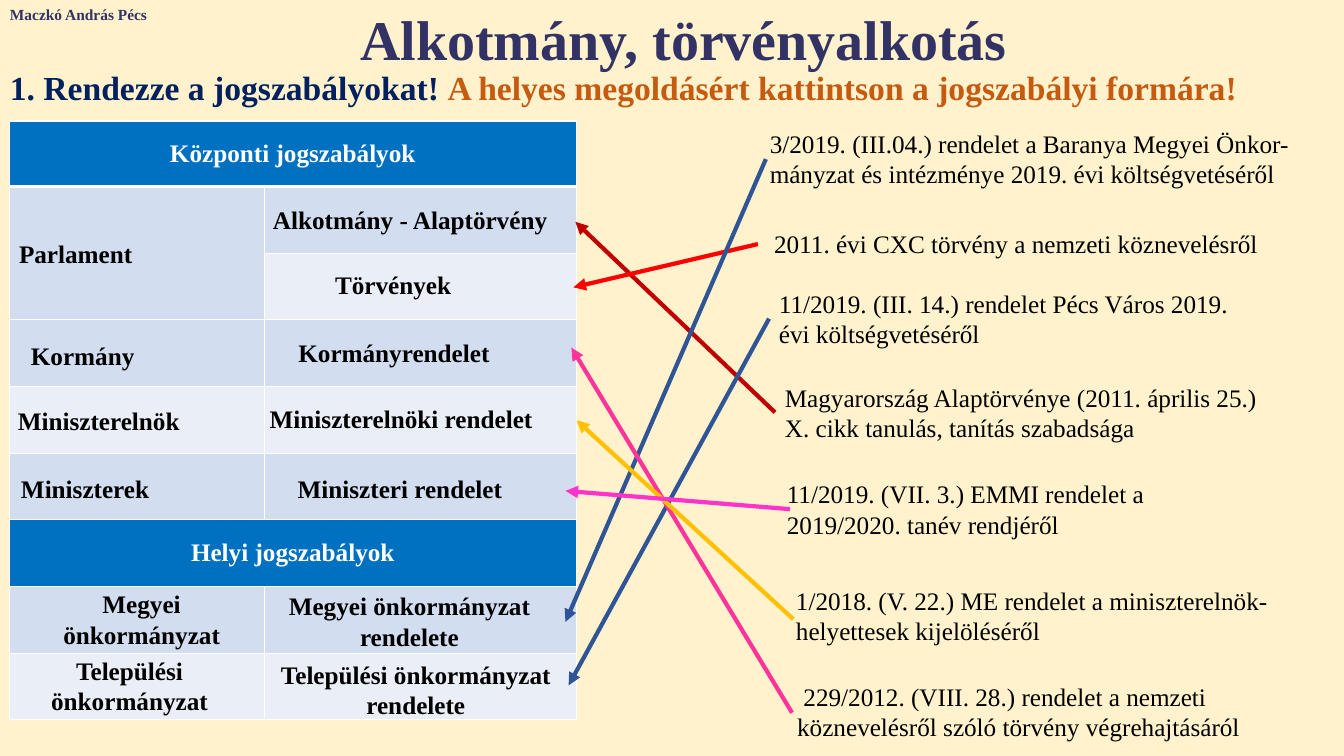
from dataclasses import dataclass

import lxml.etree
import pptx
import pptx.dml.color
import pptx.enum.shapes
import pptx.enum.text
import pptx.oxml
import pptx.oxml.ns
import pptx.slide
import pptx.table
import pptx.util

Cm = pptx.util.Cm
Pt = pptx.util.Pt
qn = pptx.oxml.ns.qn
LEFT = pptx.enum.text.PP_ALIGN.LEFT
CENTER = pptx.enum.text.PP_ALIGN.CENTER
FONT = "Times New Roman"
COLORS = {
    "cream": "FFF2CC", "indigo": "323264", "navy": "002060", "orange": "C55A11",
    "black": "000000", "white": "FFFFFF", "header": "0070C0",
    "odd_row": "D2DEEF", "even_row": "EAEFF7",
    "constitution": "C00000", "act": "FF0000", "local": "2F5597",
    "government": "FF3399", "prime_minister": "FFC000", "minister": "FF33CC",
}


@dataclass(frozen=True)
class Span:
    text: str
    color: str = "black"
    size: float = 18
    bold: bool = False


@dataclass(frozen=True)
class Label:
    left: float
    top: float
    width: float
    height: float
    paragraphs: tuple[tuple[Span, ...], ...]
    align: pptx.enum.text.PP_ALIGN = LEFT


@dataclass(frozen=True)
class Arrow:
    color: str
    start: tuple[float, float]
    end: tuple[float, float]


def rgb(color: str) -> pptx.dml.color.RGBColor:
    return pptx.dml.color.RGBColor.from_string(COLORS[color])


def line_height(lines: int) -> float:
    return 0.25 + 0.77 * lines


def category(left: float, top: float, width: float, text: str,
             align: pptx.enum.text.PP_ALIGN = CENTER, lines: int = 1) -> Label:
    return Label(left, top, width, line_height(lines), ((Span(text, bold=True),),), align)


def example(left: float, top: float, width: float, *texts: str, lines: int = 2) -> Label:
    return Label(left, top, width, line_height(lines), tuple((Span(text),) for text in texts))


def add_run(paragraph, span: Span) -> None:
    run = paragraph.add_run()
    run.text = span.text
    run.font.name = FONT
    run.font.size = Pt(span.size)
    run.font.bold = span.bold
    run.font.color.rgb = rgb(span.color)


def add_label(slide: pptx.slide.Slide, label: Label) -> None:
    frame = slide.shapes.add_textbox(
        Cm(label.left), Cm(label.top), Cm(label.width), Cm(label.height)).text_frame
    frame.word_wrap = True
    for index, spans in enumerate(label.paragraphs):
        paragraph = frame.add_paragraph() if index else frame.paragraphs[0]
        paragraph.alignment = label.align
        for span in spans:
            add_run(paragraph, span)


def add_arrow(slide: pptx.slide.Slide, arrow: Arrow) -> None:
    connector = slide.shapes.add_connector(
        pptx.enum.shapes.MSO_CONNECTOR.STRAIGHT,
        *(Cm(value) for value in arrow.start + arrow.end))
    connector.line.color.rgb = rgb(arrow.color)
    connector.line.width = Pt(3)
    lxml.etree.SubElement(connector.line._get_or_add_ln(), qn("a:tailEnd"), type="triangle")
    lxml.etree.SubElement(connector._element.spPr, qn("a:effectLst"))


def set_borders(cell: pptx.table._Cell, top: float, bottom: float) -> None:
    properties = cell._tc.get_or_add_tcPr()
    widths = {"a:lnL": 1, "a:lnR": 1, "a:lnT": top, "a:lnB": bottom}
    for index, (side, width) in enumerate(widths.items()):
        border = lxml.etree.Element(qn(side), w=str(Pt(width)))
        fill = lxml.etree.SubElement(border, qn("a:solidFill"))
        lxml.etree.SubElement(fill, qn("a:srgbClr"), val=COLORS["white"])
        properties.insert(index, border)


def add_law_table(slide: pptx.slide.Slide) -> None:
    headings = {0: "Központi jogszabályok", 6: "Helyi jogszabályok"}
    columns = (6.43, 7.87)
    rows = (1.65,) + (1.68,) * 8
    laws = slide.shapes.add_table(
        len(rows), len(columns), Cm(0.23), Cm(3.05), Cm(sum(columns)), Cm(sum(rows))).table
    for column, width in zip(laws.columns, columns):
        column.width = Cm(width)
    for index, height in enumerate(rows):
        laws.rows[index].height = Cm(height)
        fill = "header" if index in headings else "odd_row" if index % 2 else "even_row"
        for cell in laws.rows[index].cells:
            cell.fill.solid()
            cell.fill.fore_color.rgb = rgb(fill)
            set_borders(cell, 3 if index == 1 else 1, 3 if index == 0 else 1)
    for index, heading in headings.items():
        cell = laws.cell(index, 0)
        cell.merge(laws.cell(index, 1))
        cell.vertical_anchor = pptx.enum.text.MSO_ANCHOR.MIDDLE
        paragraph = cell.text_frame.paragraphs[0]
        paragraph.alignment = CENTER
        add_run(paragraph, Span(heading, "white", bold=True))
    laws.cell(1, 0).merge(laws.cell(2, 0))


HEADINGS = (
    Label(0, 0, 4.04, 0.74, ((Span("Maczkó András Pécs", "indigo", 11, True),),)),
    Label(0, 1.57, 32.61, 1.27, ((
        Span("1. Rendezze a jogszabályokat! ", "navy", 24, True),
        Span("A helyes megoldásért kattintson a jogszabályi formára!", "orange", 24, True)),)),
    Label(4.27, 0, 25.91, 1.96,
          ((Span("Alkotmány, törvényalkotás", "indigo", 40, True),),), CENTER),
)
LAWMAKERS = (
    category(0.23, 5.87, 3.58, "Parlament", LEFT),
    category(0.53, 8.46, 3.58, "Kormány", LEFT),
    category(0.2, 10.1, 4.78, "Miniszterelnök", LEFT),
    category(0.28, 11.81, 3.94, "Miniszterek", LEFT),
    category(0.33, 14.71, 6.48, "Megyei önkormányzat", lines=2),
    category(0.79, 16.38, 4.95, "Települési önkormányzat", lines=2),
)
LAW_FORMS = (
    category(6.63, 5.03, 7.62, "Alkotmány - Alaptörvény", LEFT),
    category(6.1, 6.65, 7.62, "Törvények"),
    category(6.12, 8.38, 7.62, "Kormányrendelet"),
    category(6.3, 10.03, 7.62, "Miniszterelnöki rendelet"),
    category(6.27, 11.79, 7.62, "Miniszteri rendelet"),
    category(6.6, 14.76, 7.44, "Megyei önkormányzat rendelete", lines=2),
    category(6.76, 16.48, 7.44, "Települési önkormányzat rendelete", lines=2),
)
EXAMPLES = (
    example(19.15, 3.1, 14.71, "3/2019. (III.04.) rendelet a Baranya Megyei Önkor-mányzat "
            "és intézménye 2019. évi költségvetéséről"),
    example(19.1, 5.64, 13.59, " 2011. évi CXC törvény a nemzeti köznevelésről", lines=1),
    example(19.38, 7.14, 12.45,
            "11/2019. (III. 14.) rendelet Pécs Város 2019. évi költségvetéséről"),
    example(19.53, 9.5, 13.46, "Magyarország Alaptörvénye (2011. április 25.)",
            "X. cikk tanulás, tanítás szabadsága"),
    example(19.58, 11.94, 10.69,
            "11/2019. (VII. 3.) EMMI rendelet a 2019/2020. tanév rendjéről"),
    example(19.81, 14.63, 13.21,
            "1/2018. (V. 22.) ME rendelet a miniszterelnök-helyettesek kijelöléséről"),
    example(19.84, 17.04, 13.03, " 229/2012. (VIII. 28.) rendelet a nemzeti köznevelésről "
            "szóló törvény végrehajtásáról"),
)
SOLUTIONS = (
    Arrow("constitution", (19.53, 10.39), (14.5, 5.59)),
    Arrow("act", (19.1, 6.15), (14.45, 7.24)),
    Arrow("local", (19.38, 8.03), (14.33, 17.27)),
    Arrow("local", (19.3, 4.01), (14.25, 15.67)),
    Arrow("government", (19.96, 17.96), (14.4, 8.76)),
    Arrow("prime_minister", (19.99, 15.6), (14.53, 10.59)),
    Arrow("minister", (19.91, 12.83), (14.25, 12.37)),
)


def main() -> None:
    deck = pptx.Presentation()
    deck.slide_width, deck.slide_height = Cm(33.87), Cm(19.05)
    slide = deck.slides.add_slide(deck.slide_layouts[6])
    slide.background.fill.solid()
    slide.background.fill.fore_color.rgb = rgb("cream")
    for heading in HEADINGS:
        add_label(slide, heading)
    add_law_table(slide)
    for label in LAWMAKERS + LAW_FORMS + EXAMPLES:
        add_label(slide, label)
    for solution in SOLUTIONS:
        add_arrow(slide, solution)
    deck.save("out.pptx")


if __name__ == "__main__":
    main()
